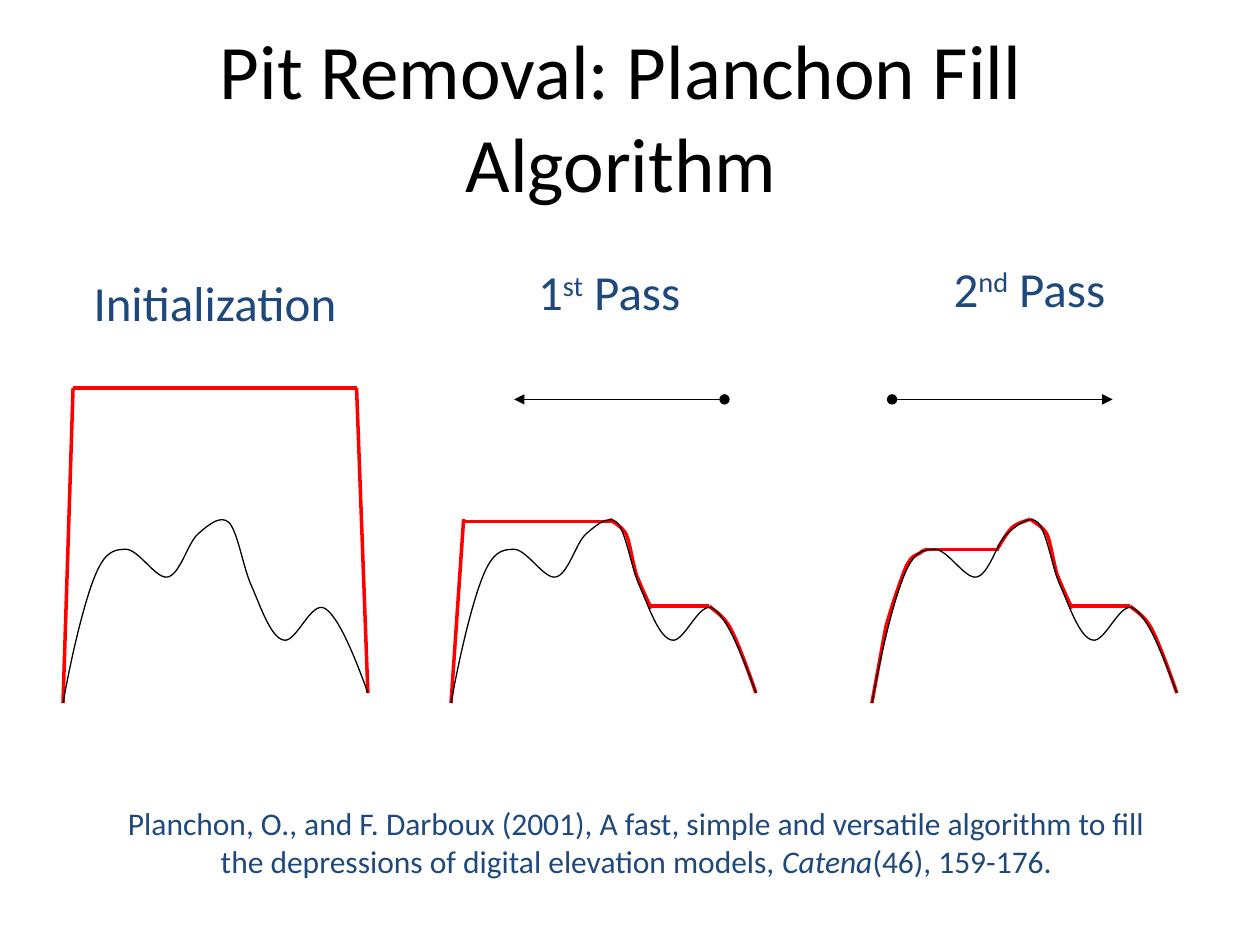
"""Build the slide that explains the Planchon pit filling algorithm."""
from lxml import etree
from pptx import Presentation, util as u
from pptx.dml.color import RGBColor
from pptx.enum import shapes, text
from pptx.oxml import ns

WHITE = RGBColor(0xFF, 0xFF, 0xFF)
BLACK = RGBColor(0, 0, 0)
RED = RGBColor(0xFF, 0, 0)
NAVY = RGBColor(0x1F, 0x49, 0x7D)

GROUND = {"color": BLACK, "width": u.Pt(0.75)}
WATER = {"color": RED, "width": u.Pt(2)}
PANELS = (0.5, 3.58, 6.92)

TERRAIN = [(0, 5.58), (0.07, 5.19), (0.17, 4.78), (0.25, 4.58),
           (0.33, 4.38), (0.4, 4.36), (0.5, 4.36),
           (0.6, 4.36), (0.74, 4.6), (0.83, 4.58),
           (0.93, 4.56), (0.99, 4.31), (1.07, 4.24),
           (1.15, 4.17), (1.25, 4.08), (1.32, 4.15),
           (1.39, 4.23), (1.43, 4.51), (1.5, 4.66),
           (1.57, 4.82), (1.65, 5.06), (1.75, 5.08),
           (1.85, 5.11), (1.97, 4.76), (2.08, 4.83),
           (2.19, 4.9), (2.31, 5.2), (2.42, 5.5)]
RIGHT_SLOPE = [(2.42, 5.5), (2.39, 5.41), (2.28, 5.1), (2.22, 4.99),
               (2.16, 4.88), (2.09, 4.85), (2.05, 4.81)]
RIGHT_PIT = [(2.05, 4.81), (1.58, 4.81)]
SHOULDER = [(1.59, 4.83), (1.57, 4.79), (1.51, 4.66), (1.47, 4.56),
            (1.44, 4.46), (1.42, 4.31), (1.39, 4.24),
            (1.35, 4.17), (1.29, 4.15), (1.26, 4.12)]
PEAK = [(1.26, 4.12), (1.24, 4.13), (1.15, 4.15), (1.11, 4.19),
        (1.07, 4.23), (1.02, 4.32), (1, 4.35)]
LEFT_SLOPE = [(0, 5.58), (0.11, 4.98),
              (0.16, 4.8), (0.23, 4.6), (0.27, 4.5),
              (0.32, 4.4), (0.35, 4.41), (0.38, 4.39),
              (0.41, 4.36), (0.43, 4.37), (0.44, 4.36)]
HIGH_WATER = [(1.27, 4.14), (0.09, 4.14)]
LEFT_EDGE = [(0, 5.58), (0.1, 4.12)]

WATER_CURVES = ([],
                [RIGHT_SLOPE, RIGHT_PIT, SHOULDER, HIGH_WATER, LEFT_EDGE],
                [RIGHT_SLOPE, RIGHT_PIT, SHOULDER, PEAK, LEFT_SLOPE])
WATER_LINES = ([[(2.42, 5.5), (2.33, 3.08)], [(2.33, 3.08), (0.08, 3.08)],
                [(0, 5.58), (0.08, 3.08)]],
               [],
               [[(0.42, 4.36), (1.01, 4.36)]])
SWEEPS = ([], [(2.17, 3.17), (0.5, 3.17)], [(0.16, 3.17), (1.91, 3.17)])

HEADINGS = [((0.58, 2.11, 2.25, 0.57), [("Initialization", {})]),
            ((3.42, 2.03, 2.83, 0.57), [("1", {}), ("st", {"raised": True}), (" Pass", {})]),
            ((6.92, 2, 2.5, 0.57), [("2", {}), ("nd", {"raised": True}), (" Pass", {})])]
CITATION = [("Planchon, O., and F. Darboux (2001), A fast, simple and versatile algorithm "
             "to fill the depressions of digital elevation models, ", {}),
            ("Catena", {"italic": True}), ("(46), 159-176.", {})]


def style_line(line, color, width):
    """Set the colour and width of a line."""
    line.color.rgb = color
    line.width = width


def place(points, left):
    """Convert panel points to slide lengths."""
    return [(u.Inches(left + x), u.Inches(y)) for x, y in points]


def bend(sp):
    """Turn each three segments, counted from the end, into one cubic curve."""
    segments = list(sp._element.iter(ns.qn("a:lnTo")))
    for i in range(len(segments) % 3, len(segments), 3):
        curve = etree.Element(ns.qn("a:cubicBezTo"))
        segments[i].addprevious(curve)
        for segment in segments[i:i + 3]:
            curve.append(segment[0])
            segment.getparent().remove(segment)


def add_curve(s, knots, left, look):
    """Add an open curve to a panel."""
    points = place(knots, left)
    builder = s.shapes.build_freeform(*points[0])
    builder.add_line_segments(points[1:], close=False)
    sp = builder.convert_to_shape()
    bend(sp)
    sp.fill.background()
    sp.shadow.inherit = False
    style_line(sp.line, **look)


def add_line(s, ends, left, look, arrow=False):
    """Add a straight line to a panel, with a dot and an arrowhead if asked."""
    start, end = place(ends, left)
    c = s.shapes.add_connector(shapes.MSO_CONNECTOR.STRAIGHT, *start, *end)
    style_line(c.line, **look)
    if arrow:
        ln = c.line._get_or_add_ln()
        for tag, kind in (("a:headEnd", "oval"), ("a:tailEnd", "triangle")):
            etree.SubElement(ln, ns.qn(tag), type=kind)
    etree.SubElement(c._element.spPr, ns.qn("a:effectLst"))


def write(p, runs, size, color):
    """Fill a centred paragraph with runs."""
    p.alignment = text.PP_ALIGN.CENTER
    for words, extras in runs:
        r = p.add_run()
        r.text = words
        look = {"name": "Calibri", "size": u.Pt(size), "italic": extras.get("italic")}
        for key, value in look.items():
            setattr(r.font, key, value)
        r.font.color.rgb = color
        if extras.get("raised"):
            r.font._element.set("baseline", "30000")


def add_text(s, box, runs, size):
    """Add a text box that grows with its text."""
    tf = s.shapes.add_textbox(*map(u.Inches, box)).text_frame
    tf.word_wrap = True
    tf.auto_size = text.MSO_AUTO_SIZE.SHAPE_TO_FIT_TEXT
    write(tf.paragraphs[0], runs, size, NAVY)


def add_backdrop(s):
    """Add the translucent white sheet behind the title and the panels."""
    sp = s.shapes.add_shape(shapes.MSO_SHAPE.RECTANGLE,
                            *map(u.Inches, (0.33, 1.42, 9.25, 4.83)))
    sp.shadow.inherit = False
    sp.line.fill.background()
    sp.fill.solid()
    sp.fill.fore_color.rgb = WHITE
    color = sp._element.spPr.find(".//" + ns.qn("a:srgbClr"))
    etree.SubElement(color, ns.qn("a:alpha"), val="90000")
    s.shapes.title._element.addprevious(sp._element)


def set_title(s, words):
    """Place and fill the title."""
    sp = s.shapes.title
    for key, value in zip(("left", "top", "width", "height"), (0.68, 0.29, 8.5, 1.25)):
        setattr(sp, key, u.Inches(value))
    sp.text_frame.vertical_anchor = text.MSO_ANCHOR.MIDDLE
    write(sp.text_frame.paragraphs[0], [(words, {})], 44, BLACK)


def main():
    """Build and save the slide."""
    prs = Presentation()
    prs.slide_width, prs.slide_height = u.Inches(10), u.Inches(7.5)
    s = prs.slides.add_slide(prs.slide_layouts[5])
    add_backdrop(s)
    set_title(s, "Pit Removal: Planchon Fill Algorithm")
    for left, curves, lines, sweep in zip(PANELS, WATER_CURVES, WATER_LINES, SWEEPS):
        for knots in curves:
            add_curve(s, knots, left, WATER)
        for ends in lines:
            add_line(s, ends, left, WATER)
        add_curve(s, TERRAIN, left, GROUND)
        if sweep:
            add_line(s, sweep, left, GROUND, arrow=True)
    for box, runs in HEADINGS:
        add_text(s, box, runs, 28)
    add_text(s, (0.74, 6.33, 8.62, 0.71), CITATION, 18)
    prs.save("out.pptx")


if __name__ == "__main__":
    main()
